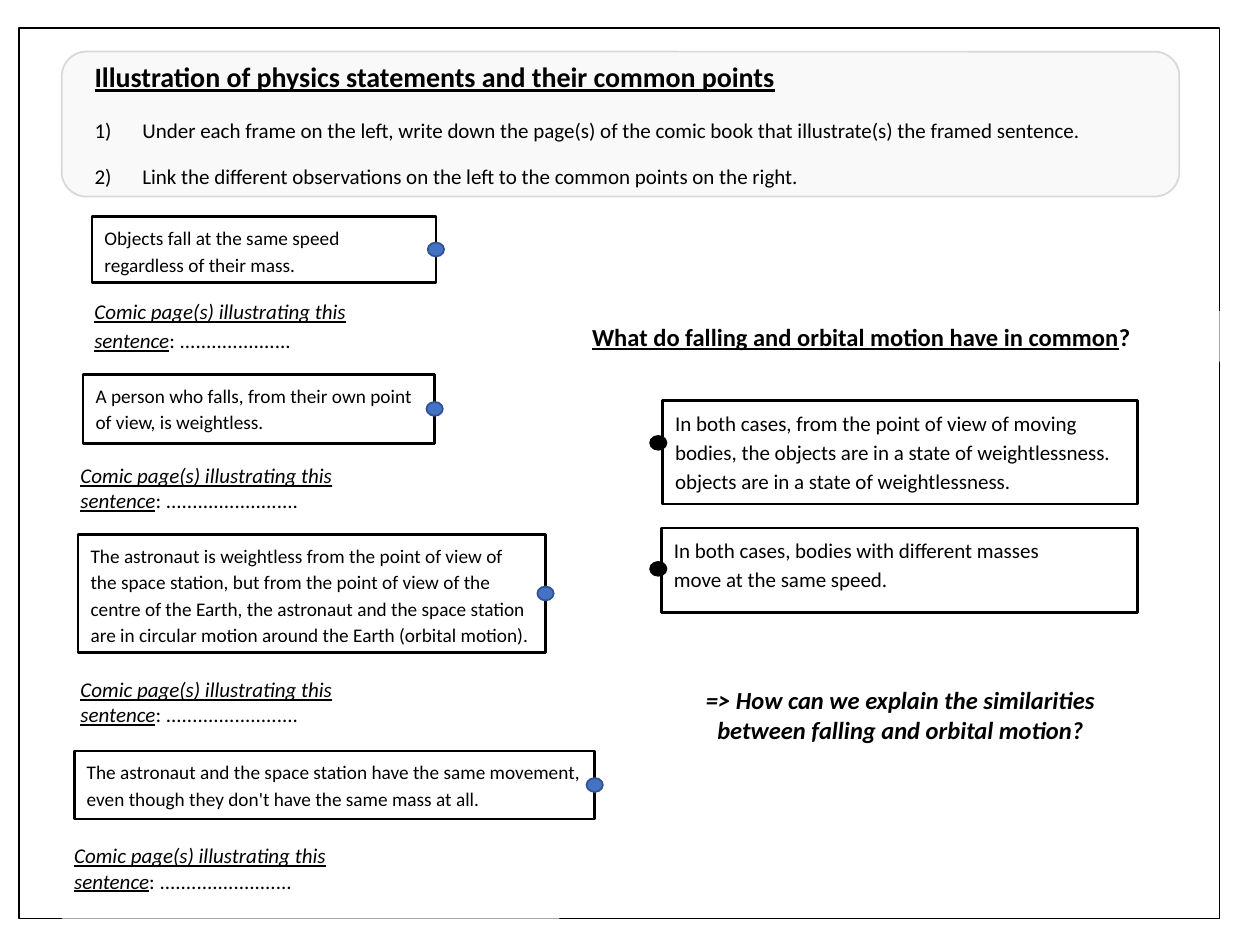
"""Build a physics worksheet slide that links observations to their common points."""
from lxml import etree
from pptx import Presentation
from pptx.dml.color import RGBColor
from pptx.enum.shapes import MSO_SHAPE
from pptx.enum.text import MSO_ANCHOR, MSO_AUTO_SIZE, PP_ALIGN
from pptx.util import Inches, Pt

RECT, ROUNDED, OVAL = MSO_SHAPE.RECTANGLE, MSO_SHAPE.ROUNDED_RECTANGLE, MSO_SHAPE.OVAL
LEFT, CENTER, TOP = PP_ALIGN.LEFT, PP_ALIGN.CENTER, MSO_ANCHOR.TOP
NO_AUTOFIT = MSO_AUTO_SIZE.NONE

THEME = {
    "font": "Calibri",
    "black": RGBColor(0x00, 0x00, 0x00),
    "white": RGBColor(0xFF, 0xFF, 0xFF),
    "blue": RGBColor(0x44, 0x72, 0xC4),
    "navy": RGBColor(0x31, 0x53, 0x8F),
    "panel": RGBColor(0xF9, 0xF9, 0xF9),
    "panel_edge": RGBColor(0xD8, 0xD8, 0xD8),
    "title": 16, "heading": 14, "body": 12, "observation": 11,
}
WHITE, BLACK = THEME["white"], THEME["black"]
SPACING = 1.15
DOT_WIDTH, DOT_HEIGHT = 0.13, 0.11

prs = Presentation()
prs.slide_width, prs.slide_height = Inches(10), Inches(7.5)
slide = prs.slides.add_slide(prs.slide_layouts[1])


def add_block(kind, left, top, width, height, fill=WHITE, edge=None, weight=1):
    block = slide.shapes.add_shape(kind, Inches(left), Inches(top), Inches(width), Inches(height))
    block.shadow.inherit = False
    block.fill.solid()
    block.fill.fore_color.rgb = fill
    if edge is None:
        block.line.fill.background()
    else:
        block.line.color.rgb = edge
        block.line.width = Pt(weight)
    return block


def write(shape, parts, size, spacing=SPACING, align=LEFT):
    frame = shape.text_frame
    frame.word_wrap = True
    frame.auto_size = NO_AUTOFIT
    frame.vertical_anchor = TOP
    paragraph = frame.paragraphs[0]
    paragraph.alignment = align
    paragraph.line_spacing = spacing
    paragraph.space_before = Pt(0)
    for text, bold, italic, underline in parts:
        first = len(paragraph.runs)
        if first:
            paragraph.add_run().text = text
        else:
            paragraph.text = text
        for run in paragraph.runs[first:]:
            run.font.name = THEME["font"]
            run.font.size = Pt(size)
            run.font.color.rgb = BLACK
            run.font.bold, run.font.italic, run.font.underline = bold, italic, underline


add_block(RECT, 0.15, 0.22, 9.53, 7.07, edge=BLACK)

closing_question = add_block(RECT, 4.85, 5.39, 4.64, 0.79)
write(closing_question,
      [("=> How can we explain the similarities \vbetween falling and orbital motion? ", True, True, False)],
      THEME["heading"], 1.0, CENTER)

common_heading = add_block(RECT, 4.6, 2.47, 5.08, 0.4)
write(common_heading,
      [("What do falling and orbital motion have in common", True, False, True), ("?", True, False, False)],
      THEME["heading"])

common_points = [
    ((5.26, 3.18, 3.77, 0.82), 3.46,
     "In both cases, from the point of view of moving bodies, the objects are in a state of "
     "weightlessness. \vobjects are in a state of weightlessness."),
    ((5.25, 4.19, 3.78, 0.67), 4.46,
     "In both cases, bodies with different masses \vmove at the same speed."),
]
for place, dot_top, sentence in common_points:
    write(add_block(RECT, *place, edge=BLACK, weight=1.5), [(sentence, False, False, False)], THEME["body"])
    add_block(OVAL, 5.16, dot_top, DOT_WIDTH, DOT_HEIGHT, BLACK, BLACK)

observations = [
    ((0.73, 1.72, 2.73, 0.52), "Objects fall at the same speed regardless of their mass.",
     (0.65, 2.29, 3.95, 0.82), 21, SPACING, 1.0),
    ((0.66, 2.97, 2.79, 0.55), "A person who falls, from their own point of view, is weightless.",
     (0.54, 3.62, 3.95, 0.82), 25, 1.0, 1.5),
    ((0.62, 4.24, 3.71, 0.94),
     "The astronaut is weightless from the point of view of the space station, but from the point of "
     "view of the centre of the Earth, the astronaut and the space station are in circular motion "
     "around the Earth (orbital motion).",
     (0.54, 5.32, 3.95, 0.82), 25, 1.0, 1.5),
    ((0.59, 5.96, 4.13, 0.54),
     "The astronaut and the space station have the same movement, even though they don't have the "
     "same mass at all.",
     (0.49, 6.64, 3.95, 0.65), 25, 1.0, 1.5),
]
for place, sentence, answer_place, dots, spacing, right_inset in observations:
    left, top, width, height = place
    write(add_block(RECT, *place, edge=BLACK, weight=1.5),
          [(sentence, False, False, False)], THEME["observation"])
    answer = add_block(RECT, *answer_place)
    answer.text_frame.margin_right = Inches(right_inset)
    write(answer,
          [("Comic page(s) illustrating this sentence", False, True, True),
           (": " + "." * dots, False, False, False)],
          THEME["body"], spacing)
    add_block(OVAL, left + width - DOT_WIDTH / 2, top + (height - DOT_HEIGHT) / 2,
              DOT_WIDTH, DOT_HEIGHT, THEME["blue"], THEME["navy"])

panel = add_block(ROUNDED, 0.49, 0.41, 8.87, 1.15, THEME["panel"], THEME["panel_edge"])
panel.adjustments[0] = 0.17

title, instructions = slide.shapes.title, slide.placeholders[1]
for placeholder, top, height in ((title, 0.38, 0.45), (instructions, 0.85, 0.7)):
    placeholder.left, placeholder.top = Inches(0.65), Inches(top)
    placeholder.width, placeholder.height = Inches(8.87), Inches(height)
    panel.element.getparent().append(placeholder.element)

write(title, [("Illustration of physics statements and their common points", True, False, True)],
      THEME["title"])

instructions.text_frame.text = (
    "Under each frame on the left, write down the page(s) of the comic book that illustrate(s) "
    "the framed sentence.\n"
    "Link the different observations on the left to the common points on the right."
)
instructions.text_frame.auto_size = NO_AUTOFIT
instructions.text_frame.vertical_anchor = TOP
for step in instructions.text_frame.paragraphs:
    step.line_spacing = SPACING
    step.space_before, step.space_after = Pt(0), Pt(10)
    step.font.size = Pt(THEME["body"])
    for run in step.runs:
        run.font.name = THEME["font"]
        run.font.size = Pt(THEME["body"])
        run.font.color.rgb = BLACK
    properties = step._p.get_or_add_pPr()
    properties.set("marL", str(Inches(0.38)))
    properties.set("indent", str(-Inches(0.38)))
    namespace = etree.QName(properties).namespace
    numbering = etree.SubElement(properties, f"{{{namespace}}}buAutoNum", type="arabicParenR")
    default_run = properties.find(f"{{{namespace}}}defRPr")
    default_run.addprevious(numbering)

prs.save("out.pptx")
